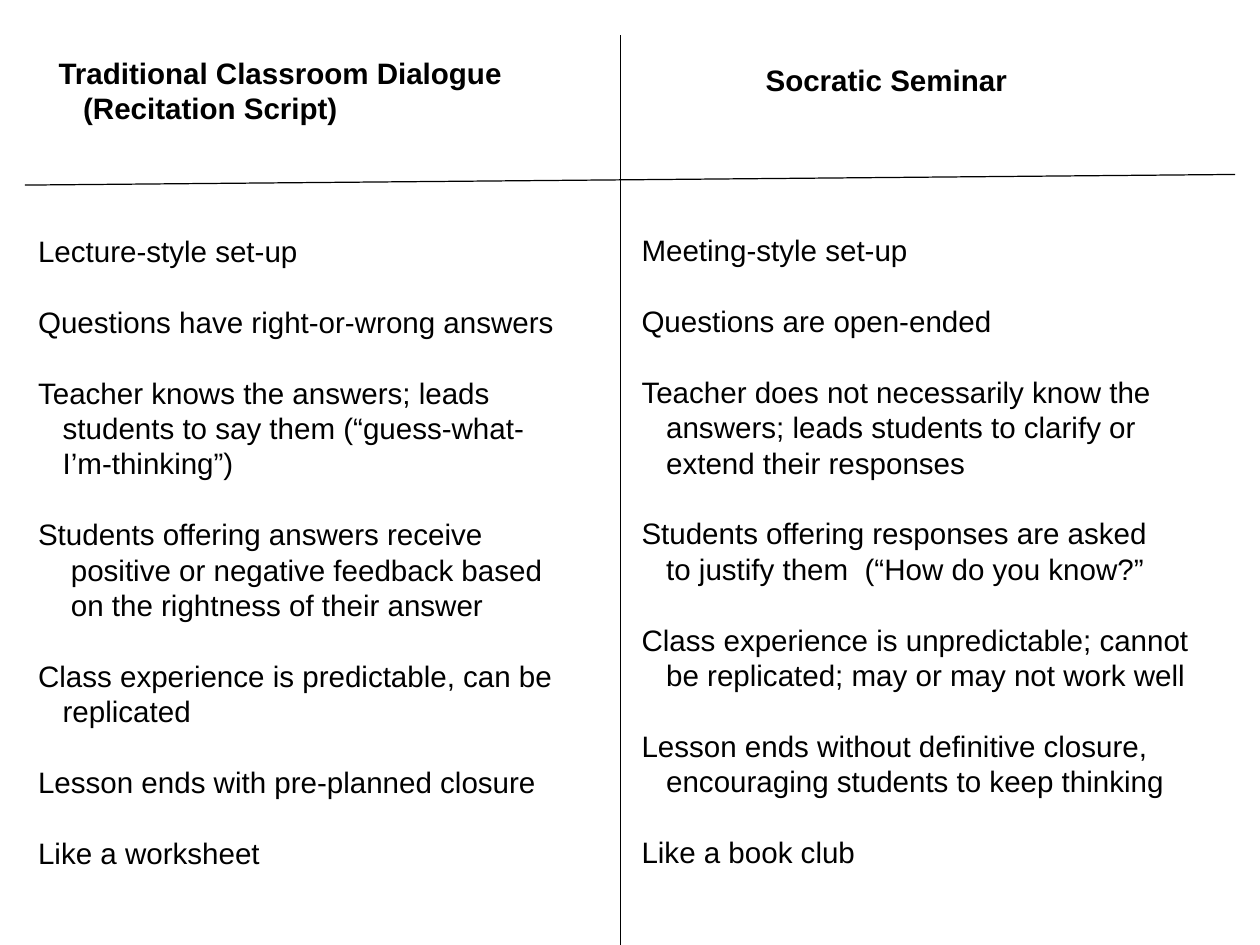
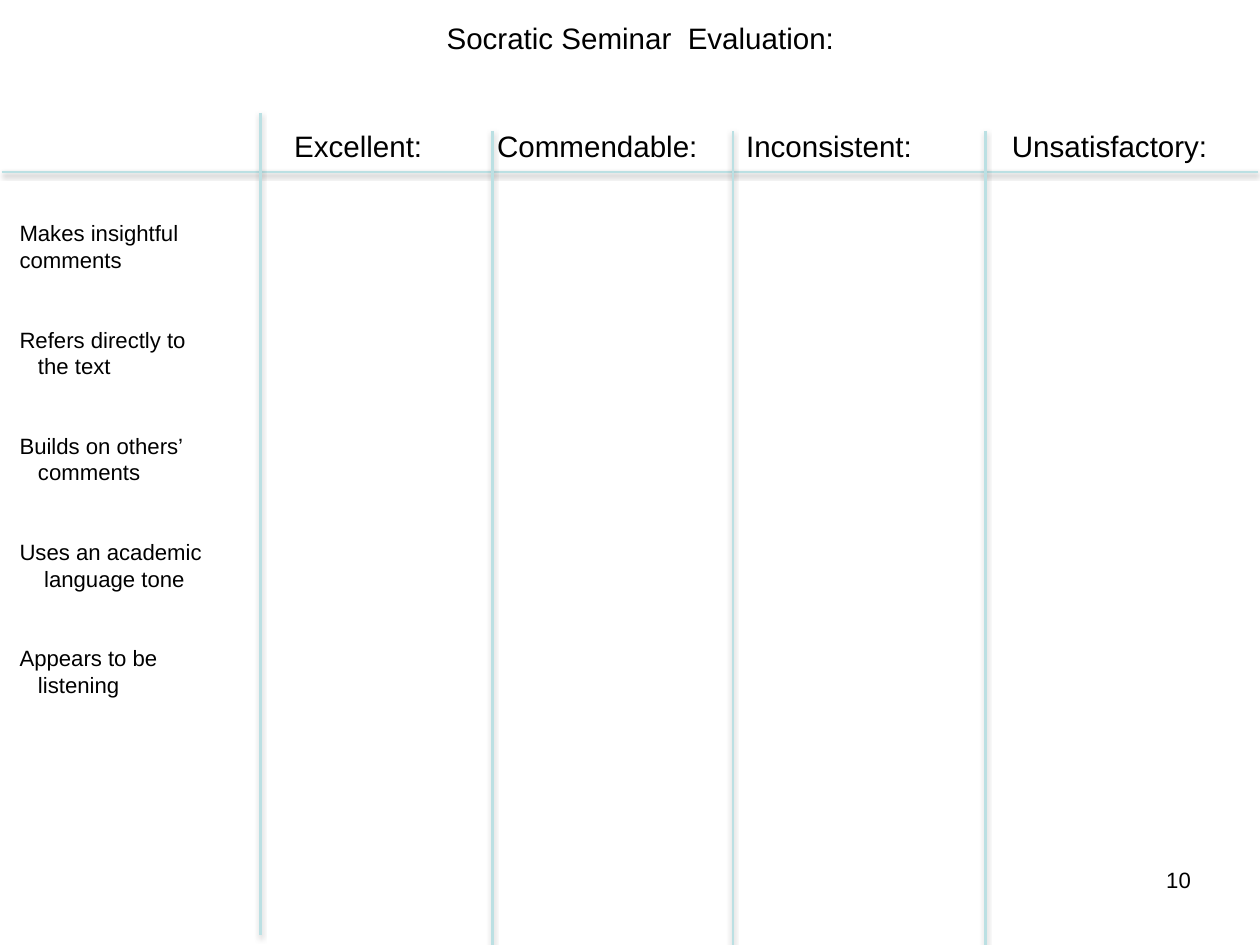
"""Build two Socratic seminar slides: a comparison chart and an evaluation grid."""
from dataclasses import dataclass
from typing import Optional

from lxml.etree import SubElement
from pptx import Presentation
from pptx.dml.color import RGBColor
from pptx.enum.shapes import MSO_CONNECTOR
from pptx.enum.text import MSO_AUTO_SIZE, PP_ALIGN
from pptx.oxml.ns import qn
from pptx.slide import Slide
from pptx.util import Inches, Pt


@dataclass(frozen=True)
class Theme:
    font: str = "Arial"
    ink: str = "000000"
    rule: str = "BBE0E3"
    large: int = 24
    small: int = 18
    leading: float = 1.2
    space_width: float = 0.278
    inset: float = 0.07


@dataclass(frozen=True)
class Entry:
    lines: tuple[str, ...]
    hang: int = 3


@dataclass(frozen=True)
class TextBlock:
    left: float
    top: float
    width: float
    height: float
    entries: tuple[Entry, ...]
    size: int
    bold: bool = False
    gap_lines: int = 1
    align: Optional[PP_ALIGN] = None


@dataclass(frozen=True)
class Rule:
    start: tuple[float, float]
    end: tuple[float, float]
    color: str
    weight: int
    shadow: bool = False


THEME = Theme()

TRADITIONAL = (
    Entry(("Lecture-style set-up",)),
    Entry(("Questions have right-or-wrong answers",)),
    Entry(("Teacher knows the answers; leads", "students to say them (“guess-what-", "I’m-thinking”)")),
    Entry(("Students offering answers receive", "positive or negative feedback based",
           "on the rightness of their answer"), 4),
    Entry(("Class experience is predictable, can be", "replicated")),
    Entry(("Lesson ends with pre-planned closure",)),
    Entry(("Like a worksheet",)),
)
SOCRATIC = (
    Entry(("Meeting-style set-up",)),
    Entry(("Questions are open-ended",)),
    Entry(("Teacher does not necessarily know the", "answers; leads students to clarify or",
           "extend their responses")),
    Entry(("Students offering responses are asked", "to justify them  (“How do you know?”")),
    Entry(("Class experience is unpredictable; cannot", "be replicated; may or may not work well")),
    Entry(("Lesson ends without definitive closure,", "encouraging students to keep thinking")),
    Entry(("Like a book club",)),
)
CRITERIA = (
    Entry(("Makes insightful", "comments"), 0),
    Entry(("Refers directly to", "the text")),
    Entry(("Builds on others’", "comments")),
    Entry(("Uses an academic", "language tone"), 4),
    Entry(("Appears to be", "listening")),
)
RATINGS = (
    ("Excellent:", 3.25, 1.69),
    ("Commendable:", 5.54, 2.51),
    ("Inconsistent:", 8.35, 2.12),
    ("Unsatisfactory:", 11.35, 2.45),
)

COMPARISON_RULES = (
    Rule((0.28, 2.09), (13.94, 1.97), THEME.ink, 1),
    Rule((7, 0.4), (7, 10.67), THEME.ink, 1),
)
COMPARISON_TEXT = (
    TextBlock(0.59, 0.55, 5.25, 0.91,
              (Entry(("Traditional Classroom Dialogue", "(Recitation Script)")),), THEME.large, bold=True),
    TextBlock(8.57, 0.63, 2.88, 0.52, (Entry(("Socratic Seminar",)),), THEME.large, bold=True),
    TextBlock(0.36, 2.56, 6.07, 7.13, TRADITIONAL, THEME.large),
    TextBlock(7.17, 2.55, 6.42, 7.13, SOCRATIC, THEME.large),
)

EVALUATION_RULES = (
    Rule((0.02, 1.94), (14.2, 1.94), THEME.rule, 2, True),
    Rule((2.94, 10.56), (2.94, 1.28), THEME.rule, 2, True),
    *(Rule((x, 10.76), (x, 1.48), THEME.rule, 2, True) for x in (5.56, 8.27, 11.12)),
)
EVALUATION_TEXT = (
    TextBlock(4.97, 0.16, 4.62, 0.52, (Entry(("Socratic Seminar  Evaluation:",)),), THEME.large),
    *(TextBlock(left, 1.37, width, 0.52, (Entry((rating,)),), THEME.large)
      for rating, left, width in RATINGS),
    TextBlock(0.15, 2.41, 2.28, 5.38, CRITERIA, THEME.small, gap_lines=2),
    TextBlock(13.08, 9.71, 0.43, 0.43, (Entry(("10",)),), THEME.small, align=PP_ALIGN.RIGHT),
)


def apply_format(target: object, values: dict[str, object]) -> None:
    """Set each named attribute on the target."""
    for name, value in values.items():
        setattr(target, name, value)


def draw_rule(slide: Slide, rule: Rule) -> None:
    """Draw a straight rule, with a soft shadow when asked."""
    connector = slide.shapes.add_connector(
        MSO_CONNECTOR.STRAIGHT, *(Inches(value) for value in (*rule.start, *rule.end)))
    connector.line.width = Pt(rule.weight)
    connector.line.color.rgb = RGBColor.from_string(rule.color)
    effects = SubElement(connector.element.spPr, qn("a:effectLst"))
    if rule.shadow:
        shadow = SubElement(effects, qn("a:outerShdw"), blurRad=str(Pt(4)), dist=str(Pt(2)),
                            dir="5400000", rotWithShape="0")
        tint = SubElement(shadow, qn("a:srgbClr"), val=THEME.ink)
        SubElement(tint, qn("a:alpha"), val="38000")


def draw_text(slide: Slide, block: TextBlock) -> None:
    """Draw a text block whose entries hang below their first line."""
    frame = slide.shapes.add_textbox(
        *(Inches(value) for value in (block.left, block.top, block.width, block.height))).text_frame
    inset = Inches(THEME.inset)
    apply_format(frame, {
        "word_wrap": False, "auto_size": MSO_AUTO_SIZE.SHAPE_TO_FIT_TEXT,
        "margin_left": inset, "margin_right": inset, "margin_top": inset, "margin_bottom": inset,
    })
    line_height = block.size * THEME.leading
    for index, entry in enumerate(block.entries):
        paragraph = frame.add_paragraph() if index else frame.paragraphs[0]
        apply_format(paragraph, {
            "alignment": block.align, "line_spacing": Pt(line_height),
            "space_before": Pt(line_height * block.gap_lines if index else 0),
        })
        if len(entry.lines) > 1:
            hang = Pt(entry.hang * THEME.space_width * block.size)
            properties = paragraph._p.get_or_add_pPr()
            properties.set("marL", str(hang))
            properties.set("indent", str(-hang))
        for position, line in enumerate(entry.lines):
            if position:
                paragraph.add_line_break()
            run = paragraph.add_run()
            run.text = line
            apply_format(run.font, {"name": THEME.font, "size": Pt(block.size), "bold": block.bold})
            run.font.color.rgb = RGBColor.from_string(THEME.ink)


def main() -> None:
    """Assemble both slides and save them."""
    deck = Presentation()
    apply_format(deck, {"slide_width": Inches(14.22), "slide_height": Inches(10.67)})
    for rules, blocks in ((COMPARISON_RULES, COMPARISON_TEXT), (EVALUATION_RULES, EVALUATION_TEXT)):
        slide = deck.slides.add_slide(deck.slide_layouts[6])
        for rule in rules:
            draw_rule(slide, rule)
        for block in blocks:
            draw_text(slide, block)
    deck.save("out.pptx")


if __name__ == "__main__":
    main()
